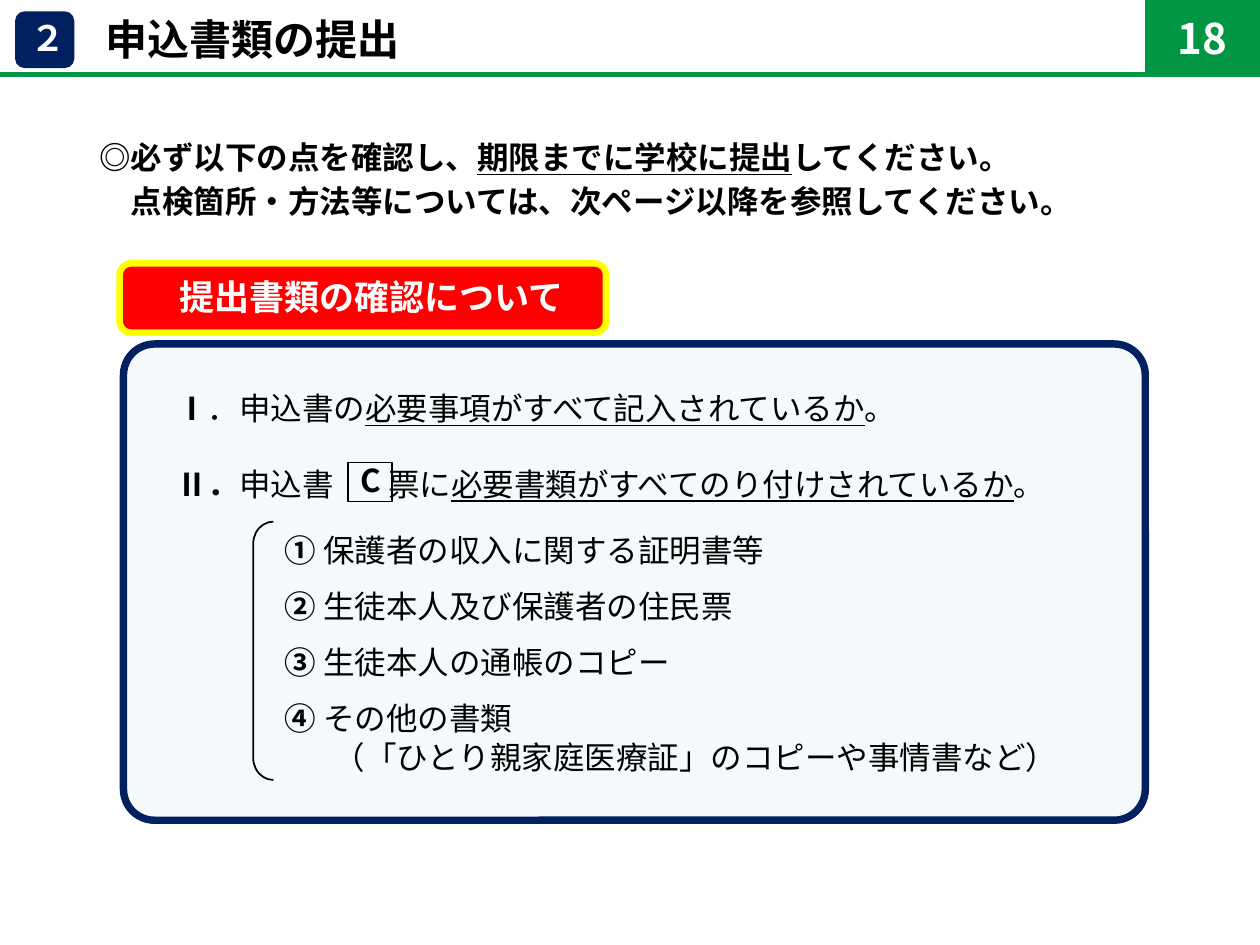
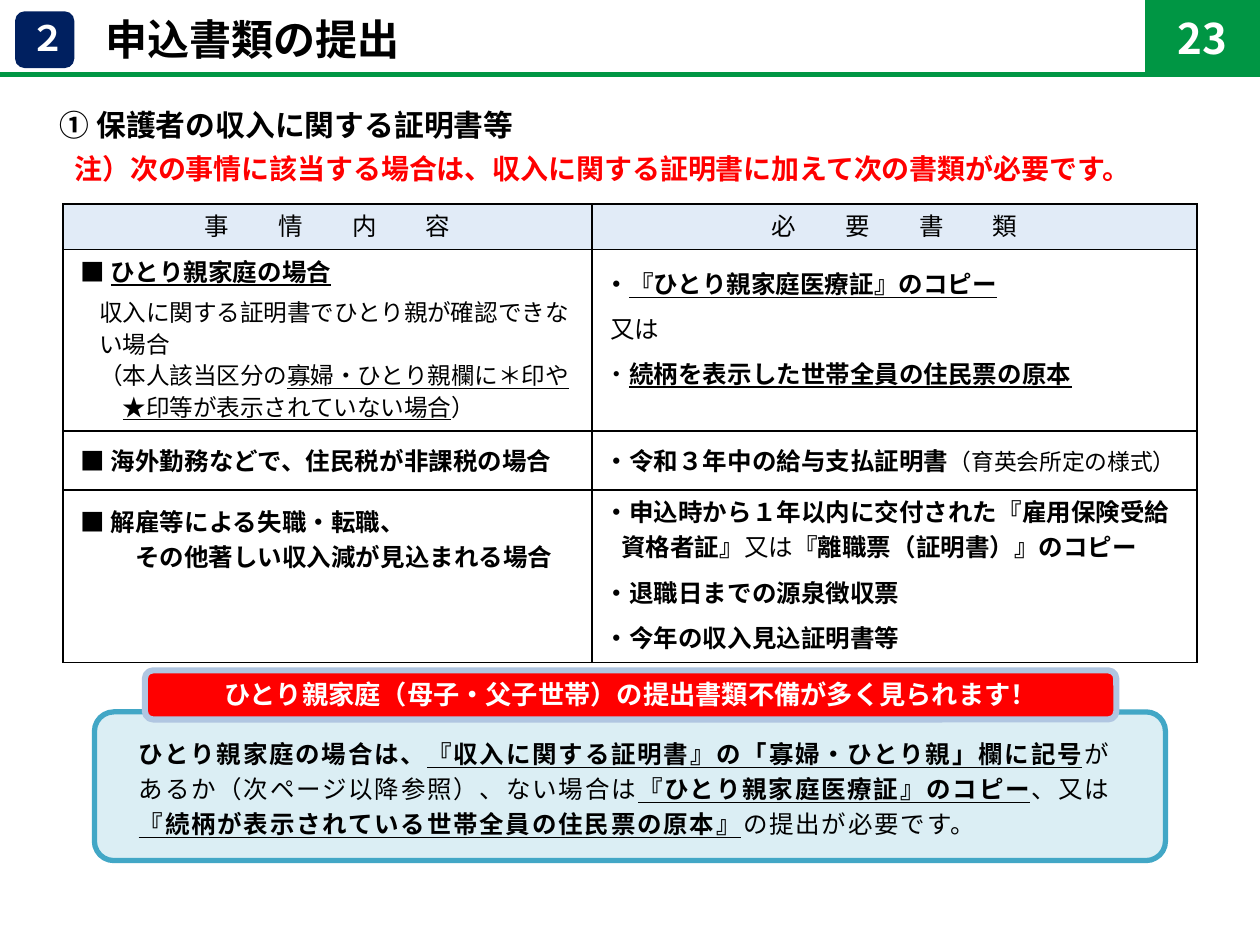
"""Builds two slides on handing in application papers."""
from lxml import etree
from pptx import Presentation
from pptx import util as u
from pptx.dml.color import RGBColor
from pptx.enum import shapes, text
from pptx.oxml.ns import qn

FONT = "Noto Sans CJK JP"
WIDE, HIGH = 10, 7.5
BLACK, WHITE = RGBColor(0, 0, 0), RGBColor(255, 255, 255)
RED, YELLOW = RGBColor(255, 0, 0), RGBColor(255, 255, 0)
NAVY, GREEN = RGBColor(0, 0x20, 0x60), RGBColor(0, 0x96, 0x44)
PALE, TEAL = RGBColor(0xDB, 0xEE, 0xF4), RGBColor(0x42, 0xA7, 0xC6)
HEAD, SOFT = RGBColor(0xE1, 0xEB, 0xF7), RGBColor(0xB0, 0xC6, 0xE1)
ROUND = shapes.MSO_SHAPE.ROUNDED_RECTANGLE
RECT = shapes.MSO_SHAPE.RECTANGLE
MID, TOP = text.MSO_ANCHOR.MIDDLE, text.MSO_ANCHOR.TOP
LEFT, CENTRE = text.PP_ALIGN.LEFT, text.PP_ALIGN.CENTER

# Each paragraph: indent, gap above, then runs of text, style, size, letter gap.
SECTION = ("２", "申込書類の提出")
INTRO = [
    (0, 0, ("◎必ず以下の点を確認し、", "b"), ("期限までに学校に提出", "bu"),
     ("してください。", "b")),
    (18, 0, ("点検箇所・方法等については、次ページ以降を参照してください。", "b")),
]
CHECKS = [
    (18, 0, ("Ⅰ", "b"), ("．申込書の",), ("必要事項がすべて記入されているか", "u"), ("。",)),
    (18, 21, ("Ⅱ．", "b"), ("申込",), ("書", "", 18, 31), ("票に",),
     ("必要書類がすべてのり付けされているか", "u"), ("。",)),
]
PAPERS = ["保護者の収入に関する証明書等", "生徒本人及び保護者の住民票",
          "生徒本人の通帳のコピー", "その他の書類"]
for num, (mark, name) in enumerate(zip("①②③④", PAPERS)):
    CHECKS.append((80, 10 if num else 16, (mark, "b"), (" " + name,)))
CHECKS.append((108, 0, ("（「ひとり親家庭医療証」のコピーや事情書など）",)))

NOTE = [
    (7.6, 0, ("① 保護者の収入に関する証明書等", "b", 17)),
    (16, 0, ("注）次の事情に該当する場合は、収入に関する証明書に加えて次の書類が必要です。", "br")),
]
COLS, ROWS = [4.2, 4.8], [0.36, 1.44, 0.47, 1.37]
# Each cell: top margin, line height of the later lines, paragraphs.
CELLS = [
    [(0.03, 20, [(0, 0, ("事情内", "", 14, 28), ("容",))]),
     (0.03, 20, [(0, 0, ("必要書", "", 14, 28), ("類",))])],
    [(0.03, 18, [
        (3, 0, ("■ ",), ("ひとり親家庭の場合", "bu")),
        (13.5, 5, ("収入に関する証明書でひとり親が確認できな", "", 13.5)),
        (13.5, 0, ("い場合", "", 13.5)),
        (13.5, 0, ("（本人該当区分の", "", 13.5), ("寡婦・ひとり親欄に＊印や", "u", 13.5)),
        (27, 0, ("★印等が表示されていない場合", "u", 13.5), ("）", "", 13.5))]),
     (0.13, 20, [
         (0, 0, ("・", "b"), ("『ひとり親家庭医療証』のコピー", "bu")),
         (3, 5.5, ("又は",)),
         (0, 5.5, ("・",), ("続柄を表示した世帯全員の住民票の原本", "bu"))])],
    [(0.09, 20, [(3, 0, ("■ ",), ("海外勤務などで、住民税が非課税の場合", "b"))]),
     (0.09, 20, [(0, 0, ("・令和３年中の給与支払証明書", "b"),
                  ("（育英会所定の様式）", "", 13))])],
    [(0.11, 20, [(3, 0, ("■ ",), ("解雇等による失職・転職、", "b")),
                 (34, 0, ("その他著しい収入減が見込まれる場合", "b"))]),
     (0.03, 20, [
         (0, 0, ("・申込時から１年以内に交付された『雇用保険受給", "b")),
         (9.4, 0, ("資格者証』", "b"), ("又は",), ("『離職票（証明書）』のコピー", "b")),
         (0, 6, ("・退職日までの源泉徴収票", "b")),
         (0, 6, ("・今年の収入見込証明書等", "b"))])],
]
ADVICE = [
    (15, 0, ("ひとり親家庭の場合は、", "b"),
     ("『収入に関する証明書』の「寡婦・ひとり親」欄に記号", "bu"), ("が",)),
    (15, 0, ("あるか（次ページ以降参照）、ない場合は",),
     ("『ひとり親家庭医療証』のコピー", "bu"), ("、又は",)),
    (15, 0, ("『続柄が表示されている世帯全員の住民票の原本』", "bu"), ("の提出が必要です。",)),
]


def put(obj, **vals):
    for key, val in vals.items():
        setattr(obj, key, val)


def pad(obj, top, low):
    put(obj, margin_left=u.Inches(0.1), margin_right=u.Inches(0.1),
        margin_top=u.Inches(top), margin_bottom=u.Inches(low))


def write(frame, paras, size, color=BLACK, align=LEFT, first=None, lead=None, track=0):
    for num, (dent, gap, *runs) in enumerate(paras):
        para = frame.paragraphs[0] if num == 0 else frame.add_paragraph()
        put(para, alignment=align, space_before=u.Pt(gap))
        high = lead if num else first or lead
        if high:
            para.line_spacing = u.Pt(high)
        para._p.get_or_add_pPr().set("marL", str(u.Pt(dent)))
        for words, *style in runs:
            flags, own, wide = (*style, *("", size, track)[len(style):])
            run = para.add_run()
            run.text = words
            put(run.font, name=FONT, size=u.Pt(own), bold="b" in flags,
                underline="u" in flags)
            run.font.color.rgb = RED if "r" in flags else color
            props = run._r.get_or_add_rPr()
            etree.SubElement(props, qn("a:ea"), typeface=FONT)
            if wide:
                props.set("spc", str(wide * 100))


def label(words):
    return [(0, 0, (words, "b"))]


def shape(slide, kind, at, fill=None, line=None, adj=None):
    item = slide.shapes.add_shape(kind, *map(u.Inches, at))
    item.shadow.inherit = False
    if fill is None:
        item.fill.background()
    else:
        item.fill.solid()
        item.fill.fore_color.rgb = fill
    if line:
        item.line.color.rgb, item.line.width = line[0], u.Pt(line[1])
    else:
        item.line.fill.background()
    if adj:
        item.adjustments[0] = adj
    return item


def fit(item, paras, size, ins=(0.05, 0.05), anchor=MID, **form):
    frame = item.text_frame
    put(frame, word_wrap=True, vertical_anchor=anchor)
    pad(frame, *ins)
    write(frame, paras, size, **form)


def box(slide, at, paras, size, **form):
    fit(slide.shapes.add_textbox(*map(u.Inches, at)), paras, size, **form)


def start(deck):
    slide = deck.slides.add_slide(deck.slide_layouts[6])
    num, title = SECTION
    fit(shape(slide, ROUND, (0.12, 0.09, 0.47, 0.45), NAVY), label(num), 20,
        ins=(0.02, 0.05), color=WHITE, align=CENTRE)
    box(slide, (0.74, 0.05, 4.34, 0.49), label(title), 24, ins=(0.08, 0.05))
    rule = slide.shapes.add_connector(shapes.MSO_CONNECTOR.STRAIGHT, 0, u.Inches(0.59),
                                      u.Inches(WIDE), u.Inches(0.59))
    rule.line.color.rgb, rule.line.width = GREEN, u.Pt(3)
    etree.SubElement(rule._element.spPr, qn("a:effectLst"))
    return slide


def page(slide, num):
    fit(shape(slide, RECT, (9.11, 0, 0.87, 0.59), GREEN, (GREEN, 3)), label(num), 24,
        color=WHITE, align=CENTRE)


def edge(cell):
    props = cell._tc.get_or_add_tcPr()
    for side in ("lnL", "lnR", "lnT", "lnB"):
        line = etree.SubElement(props, qn("a:" + side), w=str(u.Pt(1)))
        fill = etree.SubElement(line, qn("a:solidFill"))
        etree.SubElement(fill, qn("a:srgbClr"), val=str(BLACK))


def table(slide, left, top):
    size = map(u.Inches, (left, top, sum(COLS), sum(ROWS)))
    grid = slide.shapes.add_table(len(ROWS), len(COLS), *size).table
    put(grid, first_row=False, horz_banding=False)
    for col, wide in zip(grid.columns, COLS):
        col.width = u.Inches(wide)
    for r, (row, high) in enumerate(zip(grid.rows, ROWS)):
        row.height = u.Inches(high)
        for cell, (gap, lead, paras) in zip(row.cells, CELLS[r]):
            edge(cell)
            if r == 0:
                cell.fill.solid()
                cell.fill.fore_color.rgb = HEAD
            else:
                cell.fill.background()
            pad(cell, gap, 0.03)
            cell.vertical_anchor = TOP
            write(cell.text_frame, paras, 14, first=20, lead=lead,
                  align=LEFT if r else CENTRE)


def checks(deck):
    slide = start(deck)
    fit(shape(slide, ROUND, (0.95, 2.09, 3.86, 0.55), RED, (YELLOW, 3.75)),
        [(25, 0, ("提出書類の確認について", "b"))], 20, ins=(0.05, 0.08), color=WHITE)
    box(slide, (0.69, 1, 8.92, 0.91), INTRO, 18, anchor=TOP, lead=25)
    panel = shape(slide, ROUND, (0.98, 2.73, 8.11, 3.78), PALE, (NAVY, 4.25), 0.065)
    tint = panel._element.spPr.find(qn("a:solidFill"))[0]
    etree.SubElement(tint, qn("a:alpha"), val="30000")
    fit(panel, CHECKS, 18, lead=22)
    fit(shape(slide, RECT, (2.76, 3.67, 0.35, 0.31), None, (BLACK, 1)), label("C"), 18,
        ins=(0.02, 0.05), align=CENTRE)
    shape(slide, shapes.MSO_SHAPE.LEFT_BRACKET, (2.01, 4.14, 0.16, 2.05), None,
          (BLACK, 1), 1.1)
    page(slide, "18")


def proofs(deck):
    slide = start(deck)
    box(slide, (0.27, 0.75, 9.33, 0.8), NOTE, 16, anchor=TOP, lead=24)
    table(slide, 0.5, 1.62)
    fit(shape(slide, ROUND, (0.75, 5.65, 8.5, 1.18), PALE, (TEAL, 3), 0.13), ADVICE, 14,
        ins=(0.12, 0.12), lead=20, track=1)
    fit(shape(slide, ROUND, (1.15, 5.32, 7.71, 0.39), RED, (SOFT, 3.5)),
        label("ひとり親家庭（母子・父子世帯）の提出書類不備が多く見られます！"), 15,
        ins=(0.04, 0.05), color=WHITE, align=CENTRE)
    page(slide, "23")


def main():
    deck = Presentation()
    put(deck, slide_width=u.Inches(WIDE), slide_height=u.Inches(HIGH))
    checks(deck)
    proofs(deck)
    deck.save("out.pptx")


if __name__ == "__main__":
    main()
